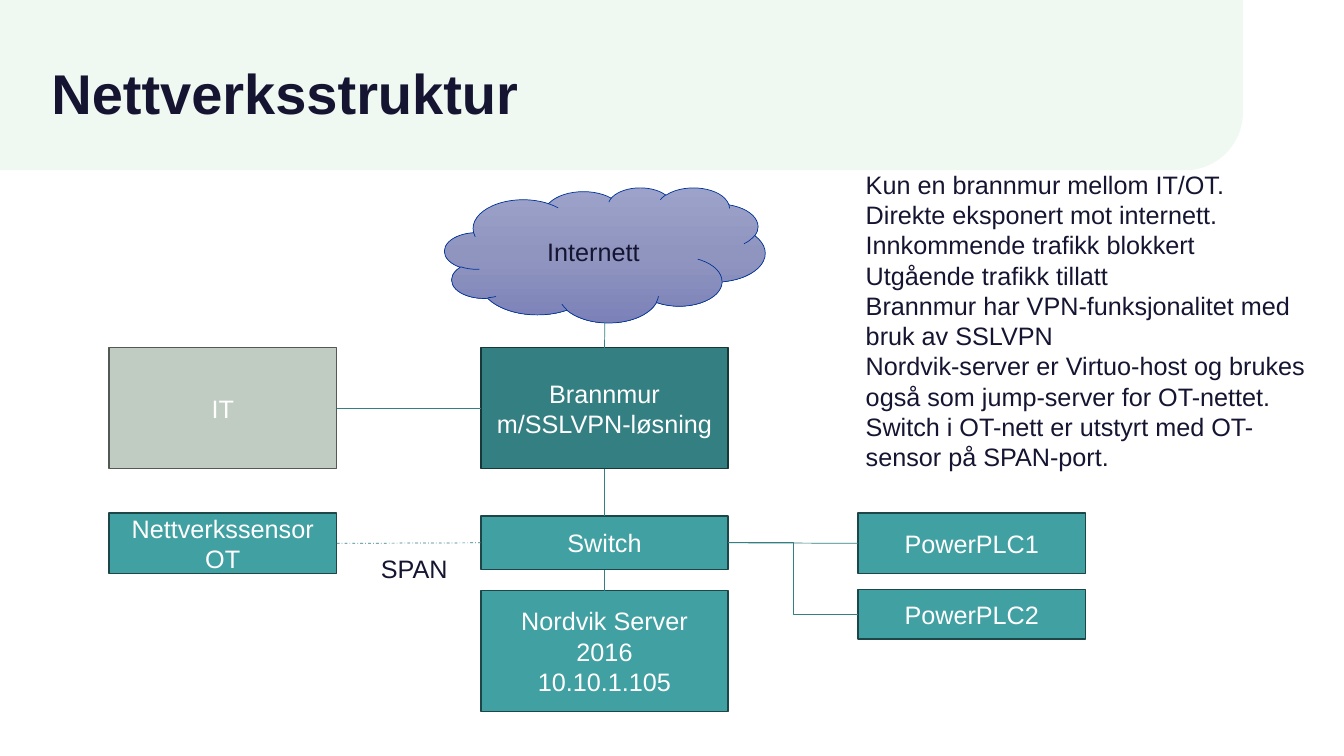
from copy import deepcopy
from dataclasses import dataclass
from typing import Optional

from lxml import etree
from pptx import Presentation, util as u
from pptx.dml.color import RGBColor
from pptx.enum import dml, shapes, text
from pptx.oxml.ns import qn

WIDTH, HEIGHT = u.Inches(13.333), u.Inches(7.5)
TOP, LEFT, BOTTOM, RIGHT = range(4)


@dataclass(frozen=True)
class Theme:
    font: str = "Arial"
    title_size: float = 40
    body_size: float = 18
    ink: str = "151532"
    white: str = "FFFFFF"
    band: str = "F0F8F2"
    teal: str = "41A0A2"
    teal_edge: str = "1C4647"
    dark_teal: str = "347F82"
    dark_teal_edge: str = "173839"
    grey: str = "C0CBC2"
    grey_edge: str = "545955"
    cloud: tuple[str, ...] = ("9DA2CA", "9095C0", "7C82B8")
    cloud_edge: str = "003499"
    thin: float = 0.5
    edge: float = 1


THEME = Theme()


@dataclass(frozen=True)
class Area:
    """Left, top, width and height in percent of the slide's size."""
    left: float
    top: float
    width: float
    height: float

    def lengths(self) -> tuple[int, ...]:
        return (int(WIDTH * self.left / 100), int(HEIGHT * self.top / 100),
                int(WIDTH * self.width / 100), int(HEIGHT * self.height / 100))


@dataclass(frozen=True)
class Column:
    left: float
    width: float

    def area(self, top: float, height: float) -> Area:
        return Area(self.left, top, self.width, height)


@dataclass(frozen=True)
class Node:
    name: str
    lines: tuple[str, ...]
    area: Area
    fill: str = THEME.teal
    edge: str = THEME.teal_edge


@dataclass(frozen=True)
class Link:
    start: str
    start_side: int
    end: str
    end_side: int
    bent: bool = False
    dash: Optional[dml.MSO_LINE_DASH_STYLE] = None


SENSORS, CORE, PLCS = Column(8.1, 16.95), Column(35.78, 18.4), Column(63.83, 16.95)
BAND = Area(0, 0, 92.48, 22.53)
TITLE = Area(3.08, 4.8, 88.88, 16)
CLOUD = Area(33.08, 24.8, 23.85, 17.87)
SPAN_LABEL = Area(27.6, 72.53, 6.53, 5.33)
NOTES = Area(63.68, 21.73, 34.2, 45.73)

NODES = (
    Node("firewall", ("Brannmur", "m/SSLVPN-løsning"), CORE.area(46, 16),
         THEME.dark_teal, THEME.dark_teal_edge),
    Node("it", ("IT",), SENSORS.area(46, 16), THEME.grey, THEME.grey_edge),
    Node("server", ("Nordvik Server 2016", "10.10.1.105"), CORE.area(78.13, 16)),
    Node("switch", ("Switch",), CORE.area(68.27, 7.07)),
    Node("plc1", ("PowerPLC1",), PLCS.area(67.87, 8)),
    Node("plc2", ("PowerPLC2",), PLCS.area(78, 6.53)),
    Node("sensor", ("Nettverkssensor OT",), SENSORS.area(67.87, 8)),
)

LINKS = (
    Link("server", TOP, "switch", BOTTOM),
    Link("switch", TOP, "firewall", BOTTOM),
    Link("it", RIGHT, "firewall", LEFT),
    Link("plc1", LEFT, "switch", RIGHT),
    Link("plc2", LEFT, "switch", RIGHT, bent=True),
    Link("sensor", RIGHT, "switch", LEFT, dash=dml.MSO_LINE.DASH_DOT),
)

FINDINGS = (
    "Kun en brannmur mellom IT/OT.",
    "Direkte eksponert mot internett.",
    "Innkommende trafikk blokkert",
    "Utgående trafikk tillatt",
    "Brannmur har VPN-funksjonalitet med bruk av SSLVPN",
    "Nordvik-server er Virtuo-host og brukes også som jump-server for OT-nettet.",
    "Switch i OT-nett er utstyrt med OT-sensor på SPAN-port.",
)


def write(frame, lines: tuple[str, ...], *, color: str = THEME.ink,
          size: float = THEME.body_size, bold: bool = False, spacing: float = 1,
          align=text.PP_ALIGN.LEFT, anchor=text.MSO_ANCHOR.TOP,
          wrap: bool = True, fit=text.MSO_AUTO_SIZE.NONE) -> None:
    frame.word_wrap, frame.auto_size, frame.vertical_anchor = wrap, fit, anchor
    for index, line in enumerate(lines):
        para = frame.add_paragraph() if index else frame.paragraphs[0]
        para.alignment, para.line_spacing = align, spacing
        span = para.add_run()
        span.text = line
        span.font.name, span.font.size, span.font.bold = THEME.font, u.Pt(size), bold
        span.font.color.rgb = RGBColor.from_string(color)


def add_outline(page, kind, area: Area, edge: Optional[str] = None,
                weight: float = THEME.edge):
    box = page.shapes.add_shape(kind, *area.lengths())
    box.shadow.inherit = False
    if edge:
        box.line.color.rgb = RGBColor.from_string(edge)
        box.line.width = u.Pt(weight)
    else:
        box.line.fill.background()
    return box


def fill_solid(box, color: str) -> None:
    box.fill.solid()
    box.fill.fore_color.rgb = RGBColor.from_string(color)


def add_header(page) -> None:
    """Put the rounded band behind the title placeholder."""
    band = add_outline(page, shapes.MSO_SHAPE.ROUND_1_RECTANGLE, BAND)
    band.adjustments[0] = 0.34
    band.element.spPr.get_or_add_xfrm().set("flipV", "1")
    fill_solid(band, THEME.band)
    title = page.shapes.title
    title.element.addprevious(band.element)
    title.left, title.top, title.width, title.height = TITLE.lengths()
    write(title.text_frame, ("Nettverksstruktur",), size=THEME.title_size, bold=True,
          spacing=0.9, anchor=text.MSO_ANCHOR.MIDDLE)


def add_cloud(page):
    cloud = add_outline(page, shapes.MSO_SHAPE.CLOUD, CLOUD, THEME.cloud_edge, THEME.thin)
    cloud.fill.gradient()
    cloud.fill.gradient_angle = 270
    stops = cloud.element.spPr.find(".//" + qn("a:gsLst"))
    middle = deepcopy(stops[0])
    middle.set("pos", "50000")
    stops.insert(1, middle)
    for stop, color in zip(cloud.fill.gradient_stops, THEME.cloud):
        stop.color.rgb = RGBColor.from_string(color)
    write(cloud.text_frame, ("Internett",), align=text.PP_ALIGN.CENTER,
          anchor=text.MSO_ANCHOR.MIDDLE)
    return cloud


def add_node(page, node: Node):
    box = add_outline(page, shapes.MSO_SHAPE.RECTANGLE, node.area, node.edge)
    fill_solid(box, node.fill)
    write(box.text_frame, node.lines, color=THEME.white, align=text.PP_ALIGN.CENTER,
          anchor=text.MSO_ANCHOR.MIDDLE)
    return box


def add_line(page, kind=shapes.MSO_CONNECTOR.STRAIGHT, start: tuple[int, int] = (0, 0)):
    line = page.shapes.add_connector(kind, *start, *start)
    line.line.color.rgb = RGBColor.from_string(THEME.dark_teal)
    line.line.width = u.Pt(THEME.thin)
    etree.SubElement(line.element.spPr, qn("a:effectLst"))
    return line


def add_link(page, link: Link, boxes: dict) -> None:
    kind = shapes.MSO_CONNECTOR.ELBOW if link.bent else shapes.MSO_CONNECTOR.STRAIGHT
    line = add_line(page, kind)
    line.begin_connect(boxes[link.start], link.start_side)
    line.end_connect(boxes[link.end], link.end_side)
    if link.dash:
        line.line.dash_style = link.dash


def add_label(page, area: Area, lines: tuple[str, ...], wrap: bool) -> None:
    box = page.shapes.add_textbox(*area.lengths())
    write(box.text_frame, lines, wrap=wrap, fit=text.MSO_AUTO_SIZE.SHAPE_TO_FIT_TEXT)


def main() -> None:
    deck = Presentation()
    deck.slide_width, deck.slide_height = WIDTH, HEIGHT
    page = deck.slides.add_slide(deck.slide_layouts.get_by_name("Title Only"))
    add_header(page)
    cloud = add_cloud(page)
    boxes = {node.name: add_node(page, node) for node in NODES}
    for link in LINKS:
        add_link(page, link, boxes)
    uplink = add_line(page, start=(cloud.left + cloud.width // 2, cloud.top + cloud.height))
    uplink.end_connect(boxes["firewall"], TOP)
    add_label(page, SPAN_LABEL, ("SPAN",), wrap=False)
    add_label(page, NOTES, FINDINGS, wrap=True)
    deck.save("out.pptx")


if __name__ == "__main__":
    main()
